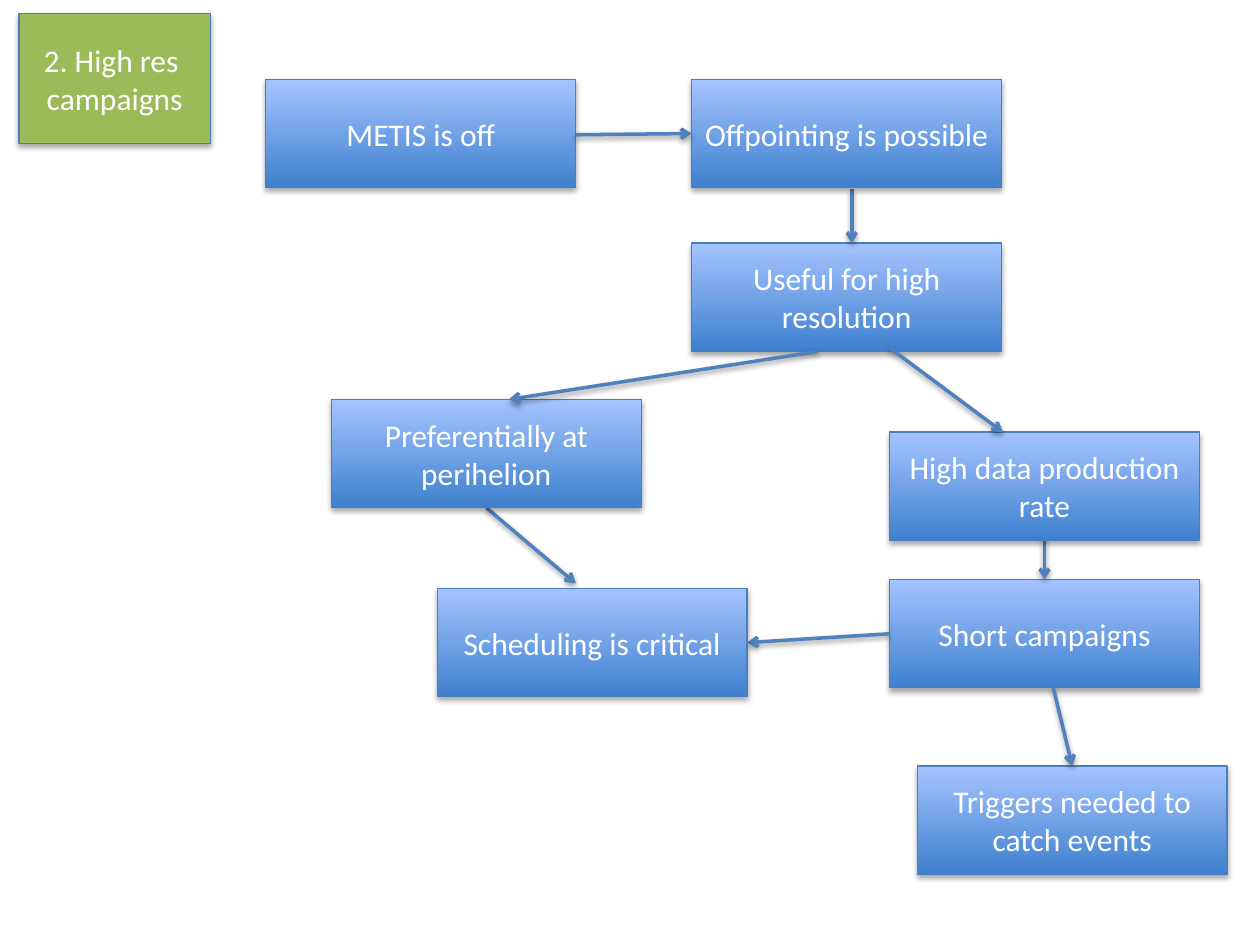
from dataclasses import dataclass

from lxml.etree import SubElement
from pptx import Presentation
from pptx.dml.color import RGBColor
from pptx.enum.shapes import MSO_CONNECTOR, MSO_SHAPE
from pptx.enum.text import MSO_ANCHOR, PP_ALIGN
from pptx.oxml.ns import qn
from pptx.slide import Slide
from pptx.util import Inches, Pt


@dataclass(frozen=True)
class Theme:
    font: str = "Calibri"
    text_size: float = 18
    text: str = "FFFFFF"
    step_bottom: str = "3F80CE"
    step_top: str = "A4C4FF"
    topic: str = "9BBB59"
    border: str = "4B7EBC"
    border_width: float = 0.75
    arrow: str = "4F81BD"
    arrow_width: float = 2
    shadow: str = "000000"
    shadow_blur: float = 3.15


@dataclass(frozen=True)
class Box:
    text: str
    left: float
    top: float
    width: float = 2.46
    height: float = 0.86
    solid: str = ""


@dataclass(frozen=True)
class Arrow:
    start: tuple[float, float]
    end: tuple[float, float]


THEME = Theme()

FLOW: list[Box | Arrow] = [
    Box("METIS is off", 2.11, 0.63),
    Box("Short campaigns", 7.06, 4.6),
    Arrow((8.29, 4.18), (8.29, 4.6)),
    Box("Triggers needed to catch events", 7.28, 6.08),
    Arrow((8.36, 5.46), (8.51, 6.08)),
    Arrow((7.06, 5.03), (5.93, 5.1)),
    Box("Scheduling is critical", 3.47, 4.67),
    Arrow((3.86, 4.03), (4.57, 4.63)),
    Box("Useful for high resolution", 5.49, 1.93),
    Arrow((6.76, 1.5), (6.76, 1.93)),
    Box("Preferentially at perihelion", 2.63, 3.17),
    Arrow((6.49, 2.79), (4.04, 3.17)),
    Box("High data production rate", 7.06, 3.43),
    Arrow((7.06, 2.76), (7.96, 3.43)),
    Box("Offpointing is possible", 5.49, 0.63),
    Arrow((4.57, 1.07), (5.49, 1.06)),
    Box("2. High res \ncampaigns", 0.15, 0.11, 1.52, 1.03, THEME.topic),
]


def rgb(value: str) -> RGBColor:
    return RGBColor.from_string(value)


def add_shadow(properties, distance: float, opacity: int) -> None:
    effects = properties.find(qn("a:effectLst"))
    if effects is None:
        effects = SubElement(properties, qn("a:effectLst"))
    shadow = SubElement(
        effects, qn("a:outerShdw"), blurRad=str(Pt(THEME.shadow_blur)),
        dist=str(Pt(distance)), dir="5400000", rotWithShape="0",
    )
    color = SubElement(shadow, qn("a:srgbClr"), val=THEME.shadow)
    SubElement(color, qn("a:alpha"), val=str(opacity * 1000))


def draw_box(slide: Slide, box: Box) -> None:
    step = slide.shapes.add_shape(
        MSO_SHAPE.RECTANGLE, Inches(box.left), Inches(box.top),
        Inches(box.width), Inches(box.height),
    )
    if box.solid:
        step.fill.solid()
        step.fill.fore_color.rgb = rgb(box.solid)
    else:
        step.fill.gradient()
        step.fill.gradient_angle = 90
        for stop, color in zip(step.fill.gradient_stops, (THEME.step_bottom, THEME.step_top)):
            stop.color.rgb = rgb(color)
    step.line.color.rgb = rgb(THEME.border)
    step.line.width = Pt(THEME.border_width)
    step.shadow.inherit = False
    add_shadow(step._element.spPr, 1.8, 35)

    step.text_frame.text = box.text
    step.text_frame.word_wrap = True
    step.text_frame.vertical_anchor = MSO_ANCHOR.MIDDLE
    for paragraph in step.text_frame.paragraphs:
        paragraph.alignment = PP_ALIGN.CENTER
        for run in paragraph.runs:
            run.font.name = THEME.font
            run.font.size = Pt(THEME.text_size)
            run.font.color.rgb = rgb(THEME.text)


def draw_arrow(slide: Slide, arrow: Arrow) -> None:
    link = slide.shapes.add_connector(
        MSO_CONNECTOR.STRAIGHT, *map(Inches, arrow.start + arrow.end)
    )
    link.line.color.rgb = rgb(THEME.arrow)
    link.line.width = Pt(THEME.arrow_width)
    properties = link._element.spPr
    SubElement(properties.find(qn("a:ln")), qn("a:tailEnd"), type="arrow")
    add_shadow(properties, 1.6, 38)


def main() -> None:
    deck = Presentation()
    deck.slide_width = Inches(10)
    deck.slide_height = Inches(7.5)
    slide = deck.slides.add_slide(deck.slide_layouts[6])
    for element in FLOW:
        if isinstance(element, Box):
            draw_box(slide, element)
        else:
            draw_arrow(slide, element)
    deck.save("out.pptx")


if __name__ == "__main__":
    main()
